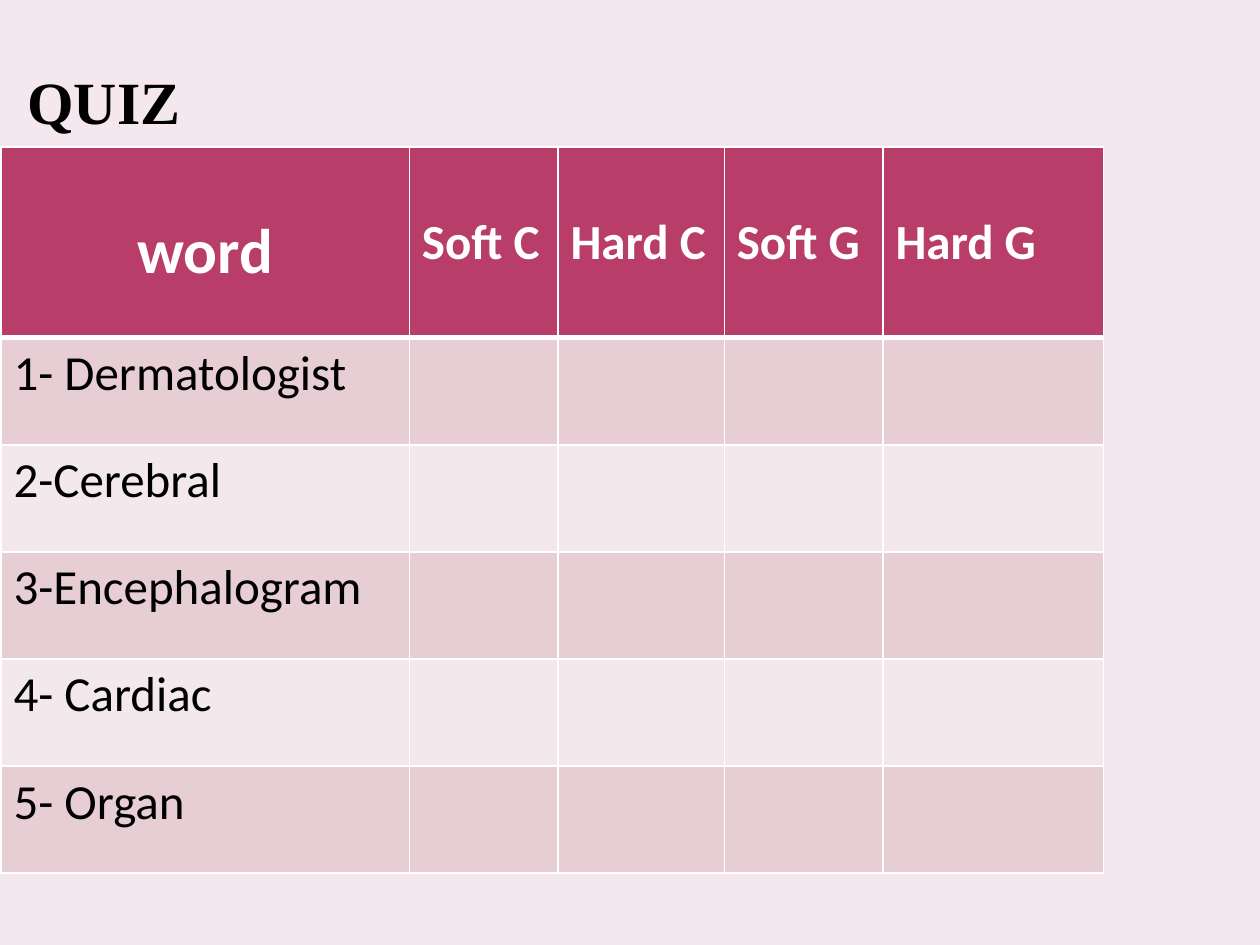
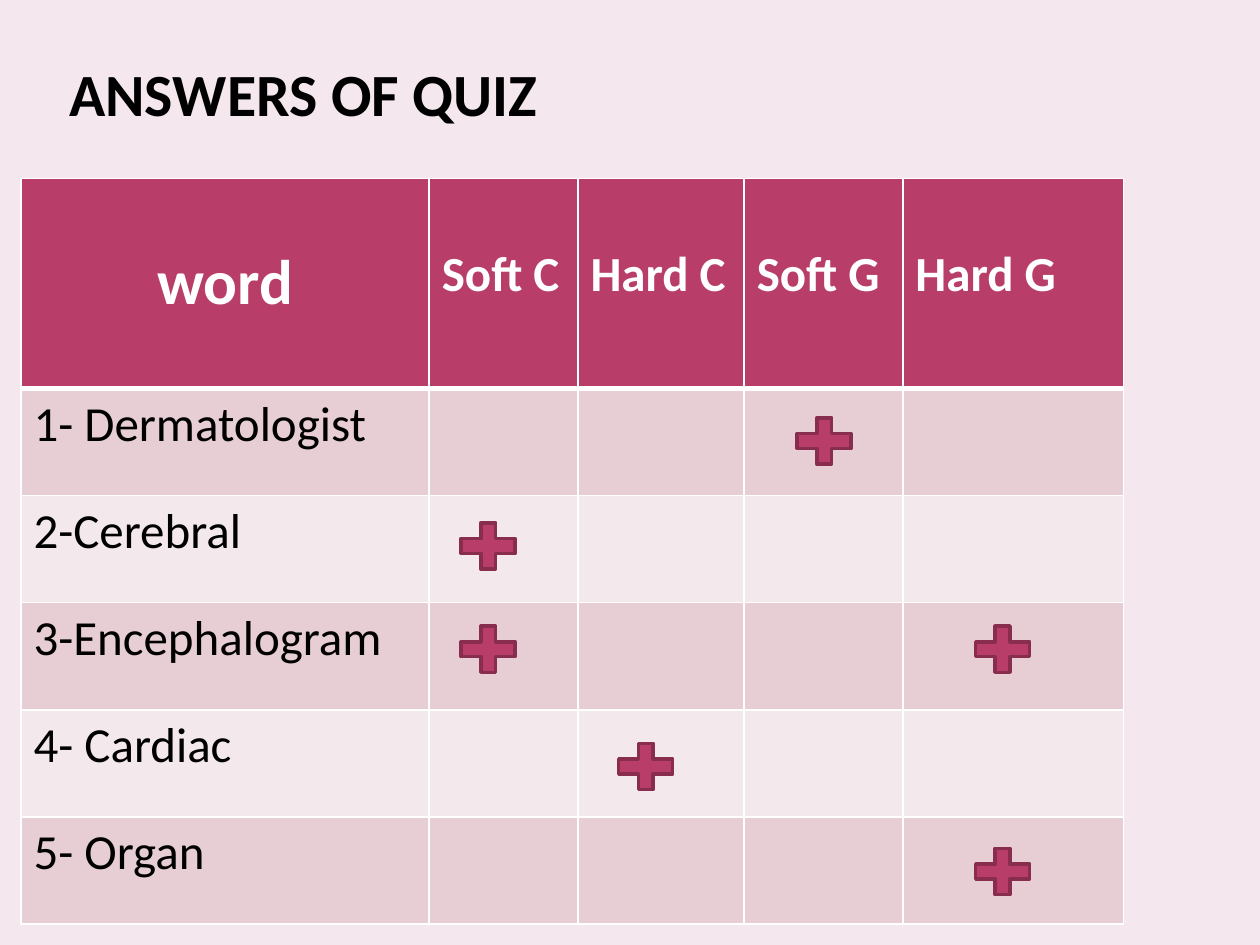
from dataclasses import dataclass

from lxml import etree
from pptx import Presentation
from pptx import util as u
from pptx.dml import color
from pptx.enum import shapes, text
from pptx.oxml import ns

INK = {
    "page": "F4E7ED",
    "head": "B83D68",
    "odd": "E6CED4",
    "even": "F3E8EB",
    "edge": "882D4D",
    "white": "FFFFFF",
    "black": "000000",
}
HEADS = ["word", "Soft C", "Hard C", "Soft G", "Hard G"]
WORDS = ["1- Dermatologist", "2-Cerebral", "3-Encephalogram", "4- Cardiac", "5- Organ"]
WIDTHS = [233.3, 85, 95, 90.7, 126]
ROW = 61.2
HEAD_GAP = 37.8
PLUS_X = {"Soft C": 258, "Hard C": 348, "Soft G": 450, "Hard G": 552}
PLUS_Y = [234, 294, 353, 420, 480]


@dataclass
class Title:
    words: str
    left: float
    top: float
    width: float
    height: float
    font: str
    below: float = 0


@dataclass
class Grid:
    left: float
    top: float
    head: float


@dataclass
class Mark:
    row: int
    head: str


def rgb(name: str) -> color.RGBColor:
    return color.RGBColor.from_string(INK[name])


def write(frame, words: str, *, size: float, font: str = "Calibri", ink: str = "black",
          bold: bool = False, align=text.PP_ALIGN.LEFT) -> None:
    para = frame.paragraphs[0]
    para.alignment = align
    run = para.add_run()
    run.text = words
    run.font.name = font
    run.font.size = u.Pt(size)
    run.font.bold = bold
    run.font.color.rgb = rgb(ink)


def add_page(deck):
    page = deck.slides.add_slide(deck.slide_layouts[6])
    page.background.fill.solid()
    page.background.fill.fore_color.rgb = rgb("page")
    return page


def add_title(page, title: Title) -> None:
    box = page.shapes.add_textbox(u.Pt(title.left), u.Pt(title.top),
                                  u.Pt(title.width), u.Pt(title.height))
    frame = box.text_frame
    frame.word_wrap = True
    frame.vertical_anchor = text.MSO_ANCHOR.BOTTOM
    frame.margin_left = frame.margin_right = u.Pt(3.6)
    frame.margin_top = 0
    frame.margin_bottom = u.Pt(title.below)
    write(frame, title.words, size=34.2, font=title.font, bold=True)


def add_edges(cell, top: float, base: float) -> None:
    props = cell._tc.get_or_add_tcPr()
    for side, width in {"L": 1, "R": 1, "T": top, "B": base}.items():
        line = etree.SubElement(props, ns.qn(f"a:ln{side}"), w=str(u.Pt(width)))
        fill = etree.SubElement(line, ns.qn("a:solidFill"))
        etree.SubElement(fill, ns.qn("a:srgbClr"), val=INK["white"])


def add_grid(page, grid: Grid) -> None:
    count = len(WORDS)
    table = page.shapes.add_table(count + 1, len(HEADS), u.Pt(grid.left), u.Pt(grid.top),
                                  u.Pt(sum(WIDTHS)), u.Pt(grid.head + count * ROW)).table
    for col, width in zip(table.columns, WIDTHS):
        col.width = u.Pt(width)
    for i, row in enumerate(table.rows):
        row.height = u.Pt(ROW if i else grid.head)
        shade = ("odd" if i % 2 else "even") if i else "head"
        for cell in row.cells:
            add_edges(cell, 3 if i == 1 else 1, 1 if i else 3)
            cell.fill.solid()
            cell.fill.fore_color.rgb = rgb(shade)
    for j, head in enumerate(HEADS):
        cell = table.cell(0, j)
        cell.margin_top = u.Pt(HEAD_GAP)
        write(cell.text_frame, head, size=28 if j else 36, ink="white", bold=True,
              align=text.PP_ALIGN.LEFT if j else text.PP_ALIGN.CENTER)
    for i, word in enumerate(WORDS, 1):
        write(table.cell(i, 0).text_frame, word, size=28)


def add_mark(page, mark: Mark) -> None:
    plus = page.shapes.add_shape(shapes.MSO_SHAPE.MATH_PLUS, u.Pt(PLUS_X[mark.head]),
                                 u.Pt(PLUS_Y[mark.row - 1]), u.Pt(42), u.Pt(36))
    plus.shadow.inherit = False
    plus.fill.solid()
    plus.fill.fore_color.rgb = rgb("head")
    plus.line.color.rgb = rgb("edge")
    plus.line.width = u.Pt(2)


def main() -> None:
    deck = Presentation()
    deck.slide_width, deck.slide_height = u.Pt(720), u.Pt(540)

    quiz = add_page(deck)
    add_title(quiz, Title("QUIZ", 12, 12, 594, 66, "Times New Roman"))
    add_grid(quiz, Grid(0.6, 84, 109))

    key = add_page(deck)
    add_title(key, Title("ANSWERS OF QUIZ", 36, 25, 570, 90, "Calibri", below=41.7))
    add_grid(key, Grid(12, 102, 120))
    for mark in [Mark(1, "Soft G"), Mark(2, "Soft C"), Mark(3, "Soft C"),
                 Mark(3, "Hard G"), Mark(4, "Hard C"), Mark(5, "Hard G")]:
        add_mark(key, mark)

    deck.save("out.pptx")


if __name__ == "__main__":
    main()
